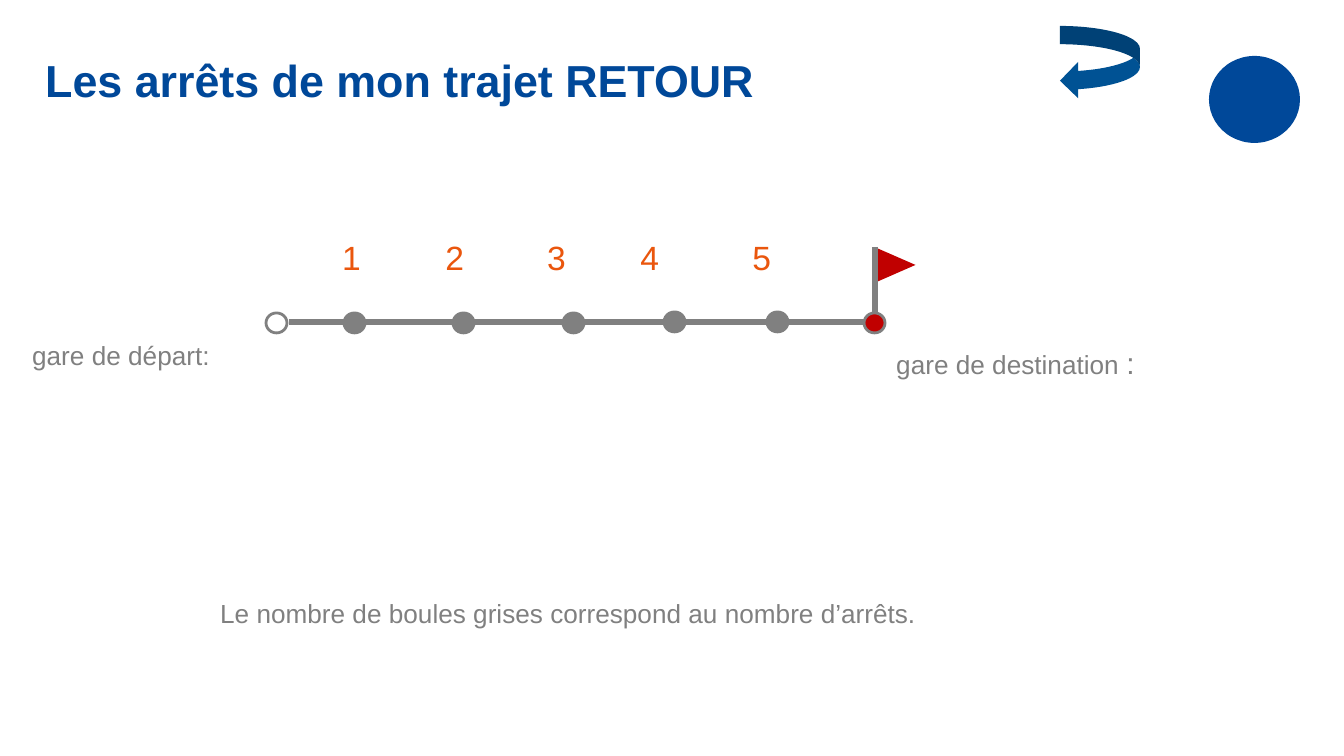
from dataclasses import dataclass

from lxml import etree
from pptx import Presentation
from pptx.dml.color import RGBColor
from pptx.enum.shapes import MSO_CONNECTOR, MSO_SHAPE
from pptx.oxml.ns import qn
from pptx.util import Pt

EMU_PER_PX = 914400 / 134.4
FONT = "Arial"
COLORS = {
    "blue": "004899",
    "arrow": "005294",
    "gray": "808080",
    "orange": "EA560D",
    "red": "C00000",
    "white": "FFFFFF",
}
STRAIGHT = MSO_CONNECTOR.STRAIGHT
STATION = MSO_SHAPE.FLOWCHART_CONNECTOR
OVAL = MSO_SHAPE.OVAL
TRIANGLE = MSO_SHAPE.ISOSCELES_TRIANGLE
RETURN_ARROW = MSO_SHAPE.CURVED_LEFT_ARROW


@dataclass(frozen=True)
class Box:
    left: int
    top: int
    width: int
    height: int


@dataclass(frozen=True)
class Label:
    box: Box
    runs: tuple[tuple[str, int], ...]  # text and size in points
    color: str
    bold: bool = False
    tabs: tuple[int, ...] = ()


@dataclass(frozen=True)
class Station:
    left: int
    top: int
    fill: str


def px(length: int) -> int:
    return round(length * EMU_PER_PX)


def rgb(name: str) -> RGBColor:
    return RGBColor.from_string(COLORS[name])


def draw_shape(slide, kind, box: Box, fill: str, outline: str = "", rotation: int = 0) -> None:
    shape = slide.shapes.add_shape(kind, px(box.left), px(box.top), px(box.width), px(box.height))
    shape.shadow.inherit = False
    shape.rotation = rotation
    shape.fill.solid()
    shape.fill.fore_color.rgb = rgb(fill)
    if outline:
        shape.line.color.rgb = rgb(outline)
        shape.line.width = Pt(1.5)
    else:
        shape.line.fill.background()


def draw_station(slide, station: Station) -> None:
    draw_shape(slide, STATION, Box(station.left, station.top, 21, 20), station.fill, "gray")


def draw_line(slide, x1: int, y1: int, x2: int, y2: int) -> None:
    line = slide.shapes.add_connector(STRAIGHT, px(x1), px(y1), px(x2), px(y2))
    line.line.color.rgb = rgb("gray")
    line.line.width = Pt(3)
    properties = line._element.find(qn("p:spPr"))
    etree.SubElement(properties, qn("a:effectLst"))


def draw_label(slide, label: Label) -> None:
    box = label.box
    frame = slide.shapes.add_textbox(
        px(box.left), px(box.top), px(box.width), px(box.height)
    ).text_frame
    frame.word_wrap = True
    paragraph = frame.paragraphs[0]
    if label.tabs:
        tab_list = etree.SubElement(paragraph._p.get_or_add_pPr(), qn("a:tabLst"))
        for position in label.tabs:
            etree.SubElement(tab_list, qn("a:tab"), pos=str(px(position)), algn="l")
    for text, size in label.runs:
        run = paragraph.add_run()
        run.text = text
        run.font.name = FONT
        run.font.size = Pt(size)
        run.font.bold = label.bold
        run.font.color.rgb = rgb(label.color)


LABELS = (
    Label(Box(32, 46, 1197, 105), (("Les arrêts de mon trajet RETOUR", 24),), "blue", bold=True),
    Label(Box(19, 333, 345, 77), (("gare de départ:", 14),), "gray"),
    Label(Box(883, 338, 304, 86), (("gare de destination ", 14), (":", 16)), "gray"),
    Label(Box(329, 230, 671, 54), (("1\t2\t3\t4\t5", 18),), "orange", tabs=(103, 205, 298, 410)),
    Label(
        Box(207, 591, 857, 77),
        (("Le nombre de boules grises correspond au nombre d’arrêts.", 14),),
        "gray",
    ),
)
DEPARTURE = Station(266, 313, "white")
DESTINATION = Station(864, 313, "red")
STOPS = tuple(
    Station(left, top, "gray")
    for left, top in ((344, 313), (453, 313), (563, 313), (664, 312), (767, 312))
)


def main() -> None:
    prs = Presentation()
    prs.slide_width, prs.slide_height = px(1344), px(756)
    slide = prs.slides.add_slide(prs.slide_layouts[6])

    # Return arrow and line badge
    draw_shape(slide, RETURN_ARROW, Box(1060, 26, 80, 73), "arrow")
    draw_shape(slide, OVAL, Box(1209, 56, 91, 87), "blue")

    # Track with departure and intermediate stops
    draw_line(slide, 289, 322, 874, 322)
    for station in (*STOPS, DEPARTURE):
        draw_station(slide, station)

    # Destination flag
    draw_shape(slide, TRIANGLE, Box(878, 245, 35, 40), "red", rotation=90)
    draw_line(slide, 875, 247, 875, 322)
    draw_station(slide, DESTINATION)

    # Title, stop numbers and captions
    for label in LABELS:
        draw_label(slide, label)

    prs.save("out.pptx")


if __name__ == "__main__":
    main()
